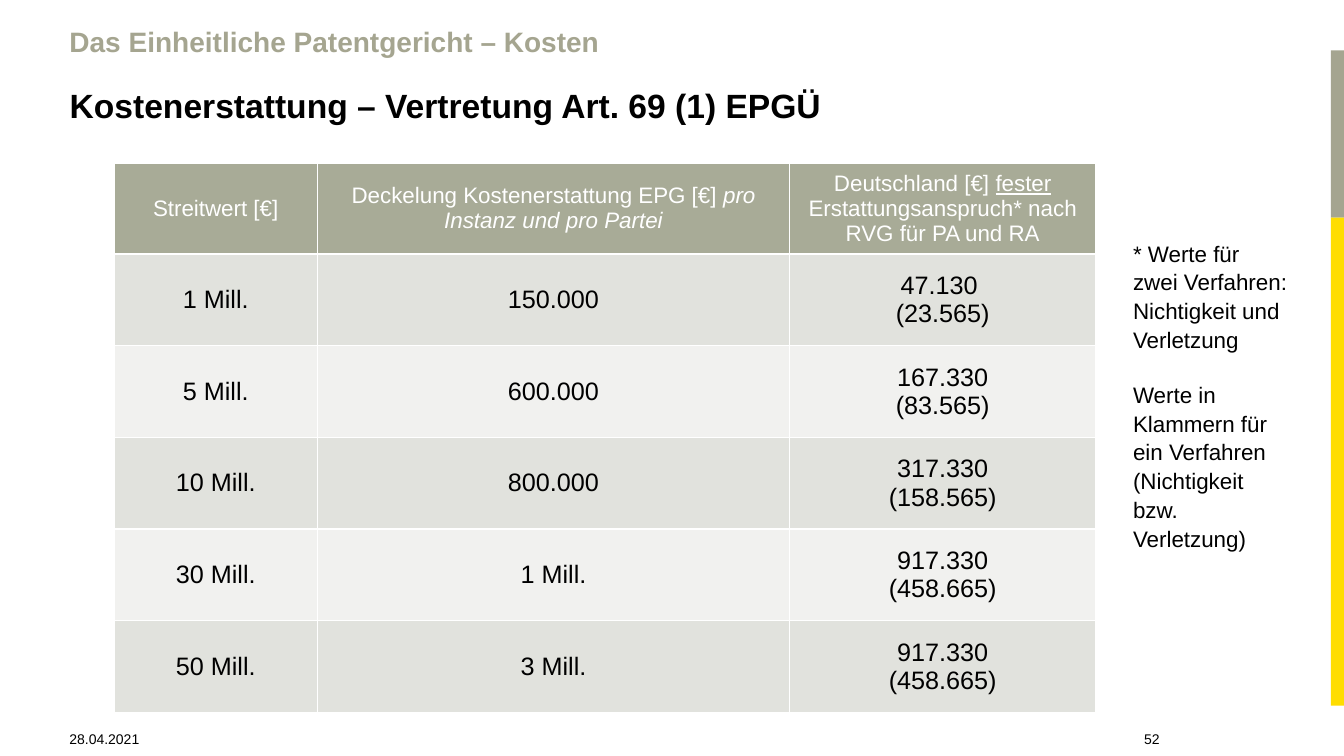
from pptx import Presentation
from pptx.dml.color import RGBColor
from pptx.enum.shapes import MSO_SHAPE as SHAPE
from pptx.enum.text import MSO_ANCHOR as ANCHOR, MSO_AUTO_SIZE as AUTO, PP_ALIGN as ALIGN
from pptx.util import Inches, Pt

SAGE, YELLOW, BLACK, WHITE = "A5A590", "FFDD00", "000000", "FFFFFF"
HEADER_FILL, BANDS = "A8AB97", ("E1E2DD", "F1F1EF")

HEADER = [
    [[("Streitwert [€]", "")]],
    [[("Deckelung Kostenerstattung EPG [€] ", ""), ("pro Instanz und pro Partei", "i")]],
    [[("Deutschland [€] ", ""), ("fester", "u"),
      (" Erstattungsanspruch* nach RVG für PA und RA", "")]],
]
COSTS = [
    ("1 Mill.", "150.000", "47.130 ", "(23.565)"),
    ("5 Mill.", "600.000", "167.330", "(83.565)"),
    ("10 Mill.", "800.000", "317.330", "(158.565)"),
    ("30 Mill.", "1 Mill.", "917.330", "(458.665)"),
    ("50 Mill.", "3 Mill.", "917.330", "(458.665)"),
]
NOTE = [
    "* Werte für zwei Verfahren: Nichtigkeit und Verletzung",
    "Werte in Klammern für ein Verfahren (Nichtigkeit bzw. Verletzung)",
]


def rgb(color):
    return RGBColor.from_string(color)


def plain(*lines):
    """Turn strings into paragraphs of one unstyled run each."""
    return [[(line, "")] for line in lines]


class Deck:
    """Draws on one slide; boxes are (left, top, width, height) in percent of the slide."""
    font = "Arial"

    def __init__(self, width, height):
        self.prs = Presentation()
        self.prs.slide_width, self.prs.slide_height = Inches(width), Inches(height)
        self.slide = self.prs.slides.add_slide(self.prs.slide_layouts[5])

    def x(self, percent):
        return round(self.prs.slide_width * percent / 100)

    def y(self, percent):
        return round(self.prs.slide_height * percent / 100)

    def box(self, left, top, width, height):
        return self.x(left), self.y(top), self.x(width), self.y(height)

    def add_runs(self, tf, paragraphs, size, color, bold=False, align=ALIGN.LEFT,
                 spacing=None, gap=0):
        """Fill a text frame; each paragraph is a list of (text, style) runs."""
        for i, runs in enumerate(paragraphs):
            p = tf.add_paragraph() if i else tf.paragraphs[0]
            p.alignment, p.line_spacing = align, spacing
            p.space_before = Pt(gap if i else 0)
            for text, style in runs:
                r = p.add_run()
                r.text = text
                f = r.font
                f.name, f.size, f.bold = self.font, Pt(size), bold
                f.italic, f.underline = style == "i", style == "u"
                f.color.rgb = rgb(color)

    def title(self, box, text, size, color):
        sp = self.slide.shapes.title
        sp.left, sp.top, sp.width, sp.height = self.box(*box)
        tf = sp.text_frame
        tf.auto_size, tf.vertical_anchor = AUTO.NONE, ANCHOR.MIDDLE
        self.add_runs(tf, plain(text), size, color, bold=True)

    def text(self, box, lines, size, color, anchor=ANCHOR.TOP, **style):
        tf = self.slide.shapes.add_textbox(*self.box(*box)).text_frame
        tf.word_wrap, tf.vertical_anchor = True, anchor
        self.add_runs(tf, plain(*lines), size, color, **style)

    def bar(self, box, color):
        sp = self.slide.shapes.add_shape(SHAPE.RECTANGLE, *self.box(*box))
        sp.shadow.inherit = False
        sp.fill.solid()
        sp.fill.fore_color.rgb = rgb(color)
        sp.line.fill.background()

    def table(self, left, top, widths, heights, rows):
        box = self.box(left, top, sum(widths), sum(heights))
        table = self.slide.shapes.add_table(len(rows), len(widths), *box).table
        for column, width in zip(table.columns, widths):
            column.width = self.x(width)
        for i, (row, height, cells) in enumerate(zip(table.rows, heights, rows)):
            row.height = self.y(height)
            fill, size, color = (BANDS[(i - 1) % 2], 18, BLACK) if i else (HEADER_FILL, 16, WHITE)
            for cell, paragraphs in zip(row.cells, cells):
                cell.fill.solid()
                cell.fill.fore_color.rgb = rgb(fill)
                cell.vertical_anchor = ANCHOR.MIDDLE
                self.add_runs(cell.text_frame, paragraphs, size, color, align=ALIGN.CENTER)


def main():
    deck = Deck(13.33, 7.5)
    margin = 4.43
    deck.bar((99.02, 6.67, 0.98, 22.13), SAGE)
    deck.bar((99.02, 28.8, 0.98, 64.53), YELLOW)
    deck.text((margin, 2.8, 79, 5.33), ["Das Einheitliche Patentgericht – Kosten"],
              20, SAGE, anchor=ANCHOR.MIDDLE, bold=True)
    deck.title((margin, 10.53, 79, 6.67), "Kostenerstattung – Vertretung Art. 69 (1) EPGÜ",
               24, BLACK)
    body = [[plain(value), plain(cap), plain(both, single)]
            for value, cap, both, single in COSTS]
    deck.table(8.48, 21.6, [15.15, 35.11, 22.81], [11.07] + [12.13] * len(body),
               [HEADER] + body)
    deck.text((83.57, 30.8, 13.13, 40.8), NOTE, 16, BLACK, spacing=1.07, gap=19)
    deck.text((margin, 94.13, 8.18, 5.33), ["28.04.2021"], 10, BLACK, anchor=ANCHOR.BOTTOM)
    deck.text((79.14, 94.13, 7.88, 5.33), ["52"], 10, BLACK, anchor=ANCHOR.BOTTOM,
              align=ALIGN.RIGHT)
    deck.prs.save("out.pptx")


if __name__ == "__main__":
    main()
